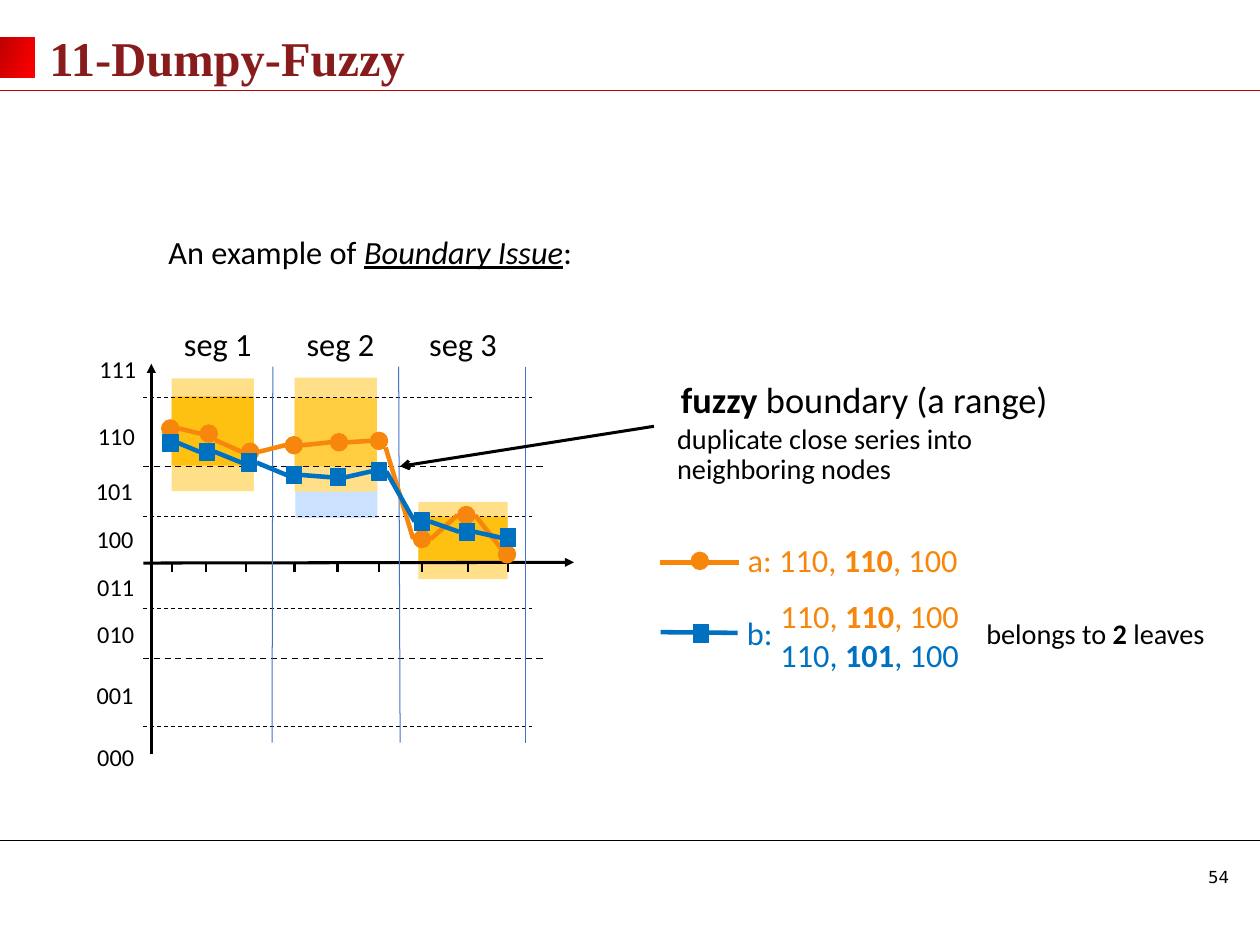
from lxml import etree
from pptx import Presentation
from pptx.dml.color import RGBColor
from pptx.enum.dml import MSO_LINE
from pptx.enum.shapes import MSO_CONNECTOR, MSO_SHAPE
from pptx.enum.text import MSO_ANCHOR, MSO_AUTO_SIZE, PP_ALIGN
from pptx.oxml.ns import qn
from pptx.util import Inches, Pt

COLORS = {
    "black": "000000", "title": "881C1C", "rule": "C00000", "red": "FF0000",
    "series_a": "F7860C", "series_b": "0070C0", "divider": "4472C4",
    "fuzzy": "FFE089", "node": "FFC111", "overlap": "FFCD3F", "lower": "CAE2FF",
}
BOLD = {"bold": True}


def rgb(name):
    return RGBColor.from_string(COLORS[name])


class Slide:
    """Holds the default text style and the current slide."""

    def __init__(self, prs, font="Calibri"):
        self.s = prs.slides.add_slide(prs.slide_layouts[6])
        self.font = font

    def text(self, box, lines, size, color="black", font=None, center=False,
             middle=False, spacing=None, grow=False):
        """Each line is a list of (text, font values) runs."""
        tf = self.s.shapes.add_textbox(*map(Inches, box)).text_frame
        frame = {
            "word_wrap": True,
            "auto_size": MSO_AUTO_SIZE.SHAPE_TO_FIT_TEXT if grow else MSO_AUTO_SIZE.NONE,
            "vertical_anchor": MSO_ANCHOR.MIDDLE if middle else MSO_ANCHOR.TOP,
        }
        for key, value in frame.items():
            setattr(tf, key, value)
        for i, runs in enumerate(lines):
            p = tf.add_paragraph() if i else tf.paragraphs[0]
            p.alignment = PP_ALIGN.CENTER if center else PP_ALIGN.LEFT
            p.line_spacing = spacing
            for content, extra in runs:
                r = p.add_run()
                r.text = content
                fmt = {"name": font or self.font, "size": Pt(size), "color": color, **extra}
                r.font.color.rgb = rgb(fmt.pop("color"))
                for key, value in fmt.items():
                    setattr(r.font, key, value)

    def shape(self, box, fill, kind=MSO_SHAPE.RECTANGLE, outlined=False):
        sp = self.s.shapes.add_shape(kind, *map(Inches, box))
        sp.shadow.inherit = False
        sp.fill.solid()
        sp.fill.fore_color.rgb = rgb(fill)
        if outlined:
            sp.line.color.rgb = rgb(fill)
            sp.line.width = Pt(1)
        else:
            sp.line.fill.background()
        return sp

    def gradient(self, box, colors, angle):
        sp = self.shape(box, colors[0])
        sp.fill.gradient()
        sp.fill.gradient_angle = angle
        for stop, color in zip(sp.fill.gradient_stops, colors):
            stop.color.rgb = rgb(color)

    def line(self, start, end, color="black", width=1, dash=False, head=None):
        cx = self.s.shapes.add_connector(
            MSO_CONNECTOR.STRAIGHT, *map(Inches, (*start, *end)))
        cx.line.color.rgb = rgb(color)
        cx.line.width = Pt(width)
        if dash:
            cx.line.dash_style = MSO_LINE.DASH
        if head:
            etree.SubElement(cx.line._get_or_add_ln(), qn("a:tailEnd"), type=head)
        etree.SubElement(cx._element.spPr, qn("a:effectLst"))
        return cx

    def dot(self, x, y):
        return self.shape((x, y, DOT, DOT), "series_a", MSO_SHAPE.OVAL, True)

    def square(self, x, y):
        return self.shape((x, y, 0.21, 0.24), "series_b", outlined=True)


DOT = 0.24
prs = Presentation()
prs.slide_width, prs.slide_height = Inches(17.32), Inches(12.99)
s = Slide(prs)

# Header and footer
s.line((0, 11.55), (17.32, 11.55))
s.gradient((0, 0.51, 0.47, 0.55), ("rule", "red"), 340)
s.line((0, 1.24), (17.32, 1.24), "rule")
s.text((16.51, 11.87, 0.8, 0.38), [[("54", {})]], 16.4, font="DejaVu Sans", grow=True)
s.text((0.58, 0.21, 12.3, 1.16), [[("11-Dumpy-Fuzzy", BOLD)]], 48, "title",
       "Times New Roman", middle=True)

# Node ranges with their fuzzy margins
for box, fill in [
    ((4.06, 6.4, 1.13, 0.72), "lower"),
    ((5.75, 6.9, 1.23, 1.06), "fuzzy"),
    ((2.36, 5.2, 1.13, 1.55), "fuzzy"),
    ((5.75, 7.1, 1.23, 0.61), "node"),
    ((2.36, 5.45, 1.13, 0.95), "node"),
    ((4.05, 5.19, 1.13, 1.57), "fuzzy"),
    ((4.05, 5.47, 1.13, 0.94), "overlap"),
]:
    s.shape(box, fill)

# Axes, ticks, breakpoints and segment dividers
s.line((2.08, 10.37), (2.08, 5), width=3, head="triangle")
s.line((1.97, 7.74), (7.89, 7.73), width=3, head="triangle")
for x in (2.36, 2.83, 3.38, 4.05, 4.64, 5.21, 5.8, 6.43, 6.98):
    s.line((x, 7.87), (x, 7.74), width=2.25)
for y in (5.47, 7.1, 8.36, 9.99):
    s.line((1.97, y), (7.31, y), dash=True)
for y in (6.41, 9.05):
    s.line((1.97, y), (7.46, y), width=1.5, dash=True)
for top, bottom in ((3.75, 3.74), (5.48, 5.5), (7.22, 7.22)):
    s.line((top, 5.04), (bottom, 10.21), "divider")

# Series a: lines run side to side, steep ones leave or enter at a diagonal
dots = [(2.22, 5.77), (2.75, 5.84), (3.32, 6.09), (3.92, 6), (4.54, 5.96),
        (5.09, 5.94), (5.68, 7.29), (6.29, 6.96), (6.85, 7.5)]
for x, y in dots:
    s.dot(x, y)
R, DIAGONAL = DOT / 2, 0.09
for i, ((x1, y1), (x2, y2)) in enumerate(zip(dots, dots[1:])):
    out = (DIAGONAL, DIAGONAL) if i in (1, 5) else (R, 0)
    into = (DIAGONAL, DIAGONAL) if i == 7 else (R, 0)
    s.line((x1 + R + out[0], y1 + R + out[1]),
           (x2 + R - into[0], y2 + R - into[1]), "series_a", 4.5)

# Series b
squares = [s.square(x, y) for x, y in [
    (2.24, 5.97), (2.74, 6.09), (3.32, 6.24), (3.94, 6.41), (4.54, 6.44),
    (5.1, 6.36), (5.7, 7.05), (6.31, 7.19), (6.88, 7.27)]]
for left, right in zip(squares, squares[1:]):
    cx = s.line((0, 0), (1, 1), "series_b", 4.5)
    cx.begin_connect(left, 3)
    cx.end_connect(right, 1)

# Segment and symbol labels
for i in range(3):
    s.text((2.36 + 1.685 * i, 4.41, 1.27, 0.64), [[(f"seg {i + 1}", {})]], 32,
           center=True, grow=True)
symbol_spots = [(1.1, 10.16), (1.09, 9.3), (1.1, 8.47), (1.1, 7.82),
                (1.09, 7.16), (1.08, 6.5), (1.11, 5.74), (1.13, 4.82)]
for i, (x, y) in enumerate(symbol_spots):
    s.text((x, y, 0.98, 0.5), [[(f"{i:03b}", {})]], 24, center=True, grow=True)

# Heading and boundary note
s.text((2.2, 2.95, 5.78, 1.08),
       [[("An example of ", {}), ("Boundary Issue", {"italic": True, "underline": True}),
         (":", {})]], 32, center=True, middle=True, spacing=0.9)
s.line((8.99, 5.86), (5.5, 6.41), width=3, head="arrow")
s.text((9.13, 5.05, 5.5, 0.94), [[("fuzzy", BOLD), (" boundary (a range)", {})]], 36,
       center=True, middle=True, spacing=0.9)
s.text((9.21, 5.71, 4.47, 1.1),
       [[("duplicate close series into neighboring nodes", {})]], 28,
       middle=True, spacing=0.9)


# Legend
def word(first, middle, color):
    return [(first, {"color": color}), (middle, {"color": color, **BOLD}),
            (", 100", {"color": color})]


s.dot(9.5, 7.59)
s.line((9.07, 7.73), (10.16, 7.73), "series_a", 4.5)
s.text((10.18, 7.38, 4.47, 0.64), [word("a: 110, ", "110", "series_a")], 32, grow=True)
s.square(9.53, 8.59)
s.line((9.08, 8.69), (10.14, 8.7), "series_b", 4.5)
s.text((10.17, 8.38, 0.63, 0.64), [[("b:", {})]], 32, "series_b", grow=True)
s.text((10.63, 8.15, 2.95, 1.18),
       [word("110, ", "110", "series_a"), word("110, ", "101", "series_b")], 32, grow=True)
s.text((13.46, 8.19, 3.44, 1.1),
       [[("belongs to ", {}), ("2", BOLD), (" leaves", {})]], 28, middle=True, spacing=0.9)

prs.save("out.pptx")
